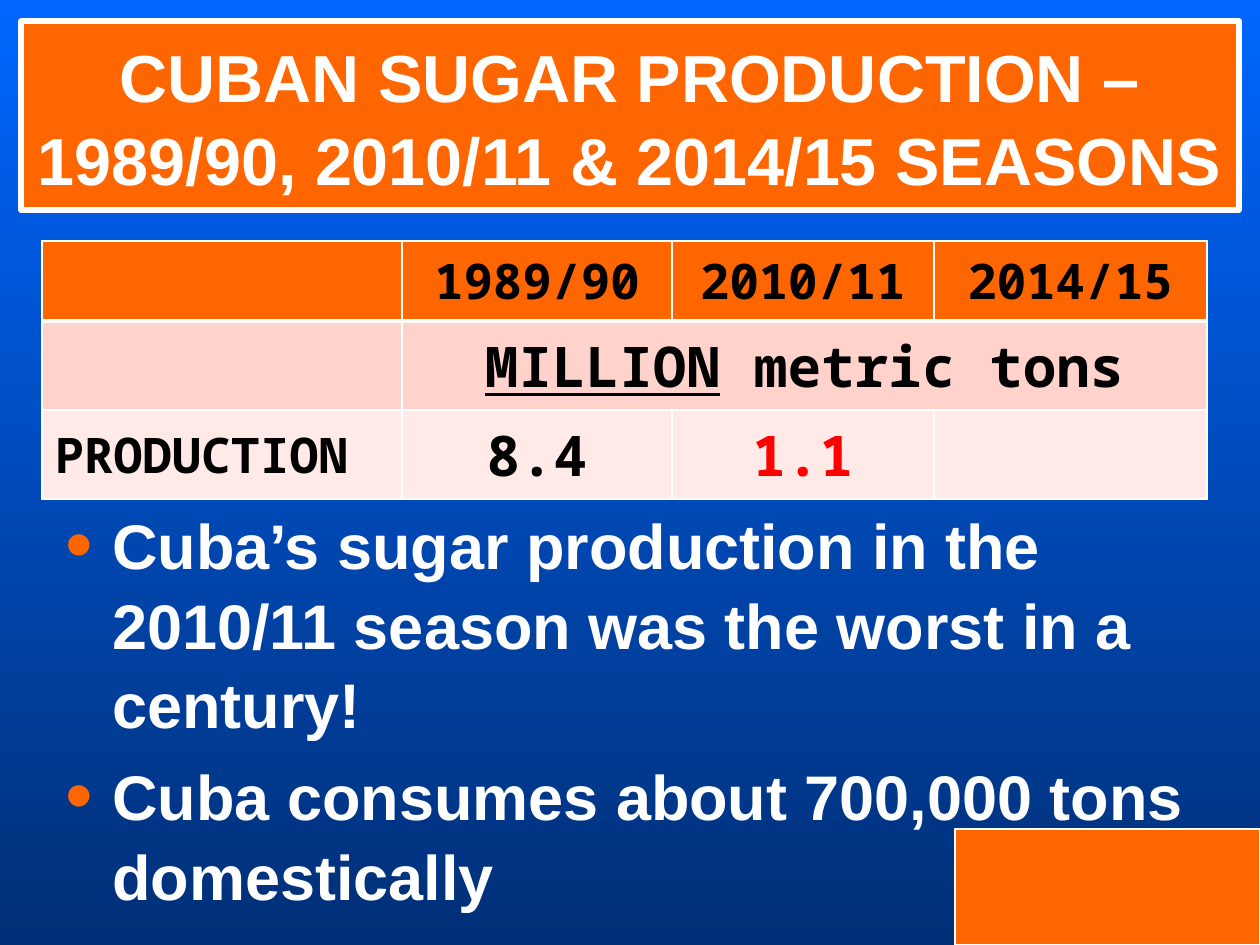
from lxml.etree import SubElement
from pptx import Presentation
from pptx.dml.color import RGBColor
from pptx.enum.shapes import MSO_SHAPE as Shape
from pptx.enum.text import MSO_ANCHOR as Anchor, MSO_AUTO_SIZE as AutoSize, PP_ALIGN as Align
from pptx.oxml import parse_xml
from pptx.oxml.ns import nsdecls, qn
from pptx.util import Emu, Pt

PX = 914400 / 126
ORANGE, WHITE, BLACK, RED = "FF6600", "FFFFFF", "000000", "FF0000"
MONO = "Noto Sans Mono"

TITLE = "CUBAN SUGAR PRODUCTION – 1989/90, 2010/11 & 2014/15 SEASONS"
BULLETS = [
    "Cuba’s sugar production in the 2010/11 season was the worst in a century!",
    "Cuba consumes about 700,000 tons domestically",
]
SEASONS = ["1989/90", "2010/11", "2014/15"]
PRODUCTION = [("8.4", BLACK), ("1.1", RED)]
COLUMN_WIDTHS = [360, 270, 262, 273]
ROWS = [(80, ORANGE), (88, "FFD3CC"), (89, "FFEAE7")]  # height, fill


def px(length):
    return Emu(round(length * PX))


def colour(value):
    return RGBColor.from_string(value)


def add_text(para, text, size, color=WHITE, font="Arial", underline=None, align=None):
    span = para.add_run()
    span.text = text
    span.font.size, span.font.name, span.font.bold = Pt(size), font, True
    span.font.color.rgb = colour(color)
    span.font.underline = underline
    if align is not None:
        para.alignment = align


def set_box(shape, left, top, width, height):
    shape.left, shape.top = px(left), px(top)
    shape.width, shape.height = px(width), px(height)


def paint(shape, line_width):
    shape.fill.solid()
    shape.fill.fore_color.rgb = colour(ORANGE)
    shape.line.color.rgb = colour(WHITE)
    shape.line.width = Pt(line_width)


def set_borders(cell, widths):
    """Draw white borders; widths maps L, R, T and B to points, in that order."""
    properties = cell._tc.get_or_add_tcPr()
    for index, (side, width) in enumerate(widths.items()):
        properties.insert(index, parse_xml(
            f'<a:ln{side} {nsdecls("a")} w="{Pt(width)}"><a:solidFill>'
            f'<a:srgbClr val="{WHITE}"/></a:solidFill></a:ln{side}>'))


def add_bullet(para, indent):
    properties = para._p.get_or_add_pPr()
    properties.set("marL", str(indent))
    properties.set("indent", str(-indent))
    bullet_color = SubElement(properties, qn("a:buClr"))
    SubElement(bullet_color, qn("a:srgbClr"), val=ORANGE)
    SubElement(properties, qn("a:buSzPct"), val="125000")
    SubElement(properties, qn("a:buFont"), typeface="Arial")
    SubElement(properties, qn("a:buChar"), char="•")


def add_background(page):
    fill = page.background.fill
    fill.gradient()
    fill.gradient_angle = 270
    for stop, position, value in zip(fill.gradient_stops, (0, 1), ("0066FF", "002F76")):
        stop.position = position
        stop.color.rgb = colour(value)


def add_title(page):
    title = page.shapes.title
    set_box(title, 21, 21, 1218, 189)
    paint(title, 3)
    frame = title.text_frame
    frame.auto_size, frame.word_wrap = AutoSize.NONE, True
    frame.vertical_anchor = Anchor.MIDDLE
    frame.paragraphs[0].line_spacing = 1.05
    add_text(frame.paragraphs[0], TITLE, 38, align=Align.CENTER)


def add_production_table(page):
    table = page.shapes.add_table(
        len(ROWS), len(COLUMN_WIDTHS), px(42), px(241),
        px(sum(COLUMN_WIDTHS)), px(sum(height for height, _ in ROWS))).table
    for column, width in zip(table.columns, COLUMN_WIDTHS):
        column.width = px(width)
    for index, (row, (height, fill)) in enumerate(zip(table.rows, ROWS)):
        row.height = px(height)
        for cell in row.cells:
            cell.fill.solid()
            cell.fill.fore_color.rgb = colour(fill)
            cell.vertical_anchor = Anchor.MIDDLE if index else Anchor.TOP
            set_borders(cell, {"L": 1, "R": 1, "T": 3 if index == 1 else 1,
                               "B": 1 if index else 3})

    def write(row, column, text, size, color=BLACK, **options):
        para = table.cell(row, column).text_frame.paragraphs[0]
        add_text(para, text, size, color, MONO, **options)

    table.cell(1, 1).merge(table.cell(1, 3))
    for column, season in enumerate(SEASONS, 1):
        write(0, column, season, 28, align=Align.CENTER)
    write(1, 1, "MILLION", 32, underline=True, align=Align.CENTER)
    write(1, 1, " metric tons", 32)
    write(2, 0, "PRODUCTION", 28)
    for column, (amount, color) in enumerate(PRODUCTION, 1):
        write(2, column, amount, 32, color, align=Align.CENTER)


def add_bullets(page):
    frame = page.shapes.add_textbox(px(53), px(497), px(1155), px(407)).text_frame
    frame.word_wrap = True
    for index, text in enumerate(BULLETS):
        para = frame.add_paragraph() if index else frame.paragraphs[0]
        add_bullet(para, px(47))
        para.line_spacing = 1.05
        if index:
            para.space_before = Pt(7.2)
        add_text(para, text, 36)


def main():
    deck = Presentation()
    deck.slide_width, deck.slide_height = px(1260), px(945)
    page = deck.slides.add_slide(deck.slide_layouts[5])
    add_background(page)
    corner = page.shapes.add_shape(Shape.RECTANGLE, px(955), px(829), px(305), px(116))
    corner.shadow.inherit = False
    paint(corner, 0.75)
    add_title(page)
    add_production_table(page)
    add_bullets(page)
    deck.save("out.pptx")


if __name__ == "__main__":
    main()
